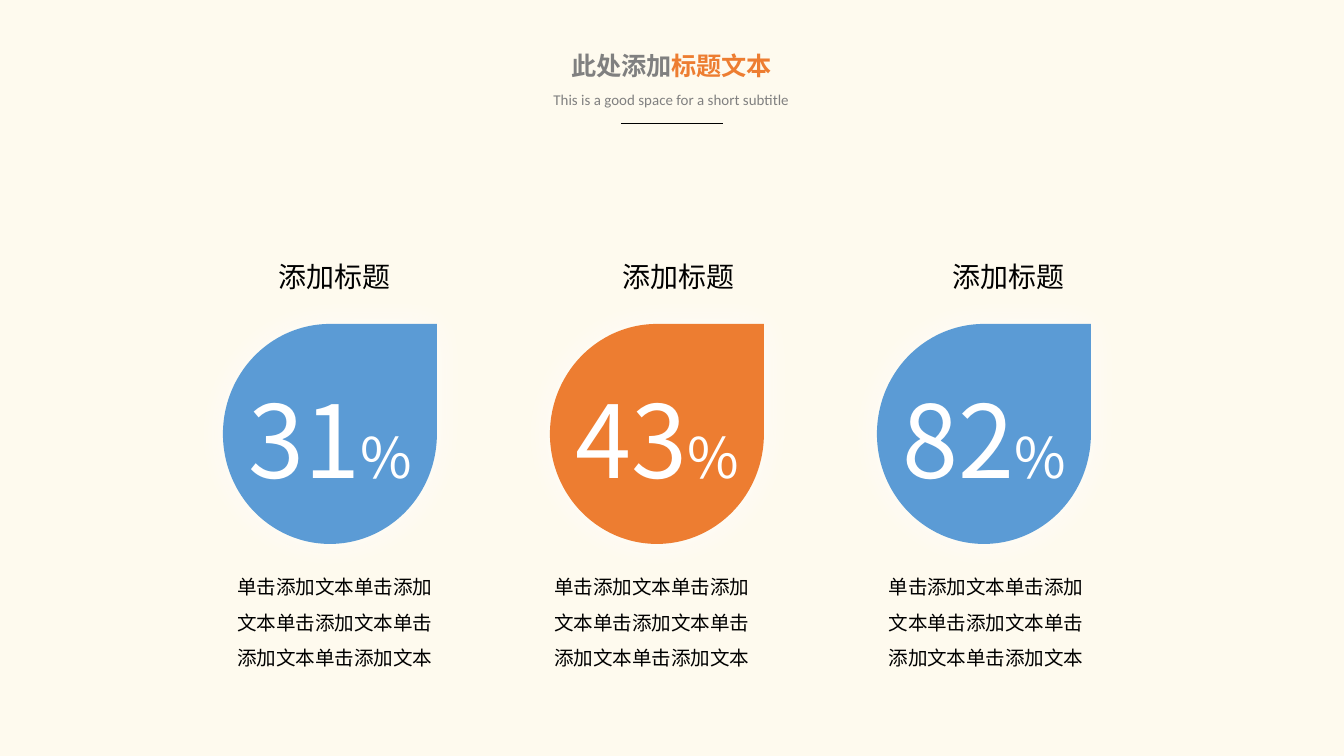
"""Build a slide with three percentage drops under a two-tone title."""
import dataclasses

import lxml.etree
import pptx
import pptx.dml.color
import pptx.enum.shapes
import pptx.enum.text
import pptx.oxml.ns
import pptx.util


@dataclasses.dataclass(frozen=True)
class Theme:
    cream: str = "FEFAEE"
    grey: str = "808080"
    orange: str = "ED7D31"
    blue: str = "5B9BD5"
    black: str = "000000"
    white: str = "FFFFFF"
    latin: str = "Calibri"
    chinese: str = "Noto Sans CJK SC"
    title: float = 13.5
    subtitle: float = 8
    heading: float = 15
    body: float = 10.5
    leading: float = 19.1
    number: float = 54
    percent: float = 30


theme = Theme()
rgb = pptx.dml.color.RGBColor.from_string
qn = pptx.oxml.ns.qn
Anchor = pptx.enum.text.MSO_ANCHOR


def px(count):
    return pptx.util.Emu(round(count * 914400 / 134.4))


def write(shape, lines, *, font, anchor=Anchor.MIDDLE, top=0, bottom=0, leading=None, bold=False):
    """Fill a shape with centred lines, each a list of (text, size, colour) spans."""
    frame = shape.text_frame
    frame.auto_size = pptx.enum.text.MSO_AUTO_SIZE.NONE
    frame.word_wrap = False
    frame.vertical_anchor = anchor
    frame.margin_left = frame.margin_right = 0
    frame.margin_top, frame.margin_bottom = px(top), px(bottom)
    for index, spans in enumerate(lines):
        para = frame.add_paragraph() if index else frame.paragraphs[0]
        para.alignment = pptx.enum.text.PP_ALIGN.CENTER
        if leading:
            para.line_spacing = pptx.util.Pt(leading)
        for text, size, colour in spans:
            span = para.add_run()
            span.text = text
            span.font.name = font
            span.font.size = pptx.util.Pt(size)
            span.font.bold = bold
            span.font.color.rgb = rgb(colour)
            east_asian = lxml.etree.SubElement(span.font._element, qn("a:ea"))
            east_asian.set("typeface", theme.chinese)


deck = pptx.Presentation()
deck.slide_width, deck.slide_height = px(1344), px(756)
page = deck.slides.add_slide(deck.slide_layouts.get_by_name("Title Only"))
page.background.fill.solid()
page.background.fill.fore_color.rgb = rgb(theme.cream)

title = page.shapes.title
title.left, title.top, title.width, title.height = px(556), px(43), px(231), px(44)
title_spans = [("此处添加", theme.title, theme.grey), ("标题文本", theme.title, theme.orange)]
write(title, [title_spans], font=theme.latin, bold=True)

subtitle = page.shapes.add_textbox(px(539), px(83), px(265), px(32))
subtitle_spans = [("This is a good space for a short subtitle", theme.subtitle, theme.grey)]
write(subtitle, [subtitle_spans], font=theme.latin)

rule = page.shapes.add_connector(
    pptx.enum.shapes.MSO_CONNECTOR.STRAIGHT, px(621), px(124), px(723), px(124))
rule.line.color.rgb = rgb(theme.black)
rule.line.width = pptx.util.Pt(0.5)
lxml.etree.SubElement(rule._element.spPr, qn("a:effectLst"))

body_lines = ["单击添加文本单击添加", "文本单击添加文本单击", "添加文本单击添加文本"]
columns = [
    ("31", theme.blue, 335, 335),
    ("43", theme.orange, 679, 652),
    ("82", theme.blue, 1009, 986),
]
for index, (number, colour, heading_centre, body_centre) in enumerate(columns):
    drop = page.shapes.add_shape(
        pptx.enum.shapes.MSO_SHAPE.TEAR, px(223 + 327 * index), px(324), px(214), px(220))
    drop.fill.solid()
    drop.fill.fore_color.rgb = rgb(colour)
    drop.line.fill.background()
    drop.shadow.inherit = False
    glow = lxml.etree.SubElement(
        drop._element.spPr.find(qn("a:effectLst")), qn("a:outerShdw"),
        blurRad=str(pptx.util.Pt(20)), dist="0", dir="0", algn="ctr", rotWithShape="0")
    glow_colour = lxml.etree.SubElement(glow, qn("a:srgbClr"), val=theme.white)
    lxml.etree.SubElement(glow_colour, qn("a:alpha"), val="80000")
    value = [(number, theme.number, theme.white), ("%", theme.percent, theme.white)]
    write(drop, [value], font=theme.chinese, anchor=Anchor.TOP, top=22, bottom=-14)

    heading = page.shapes.add_textbox(px(heading_centre - 70), px(253), px(140), px(47))
    write(heading, [[("添加标题", theme.heading, theme.black)]], font=theme.chinese)

    body = page.shapes.add_textbox(px(body_centre - 112), px(546), px(224), px(136))
    write(body, [[(line, theme.body, theme.black)] for line in body_lines],
          font=theme.chinese, anchor=Anchor.TOP, top=17, leading=theme.leading)

deck.save("out.pptx")
